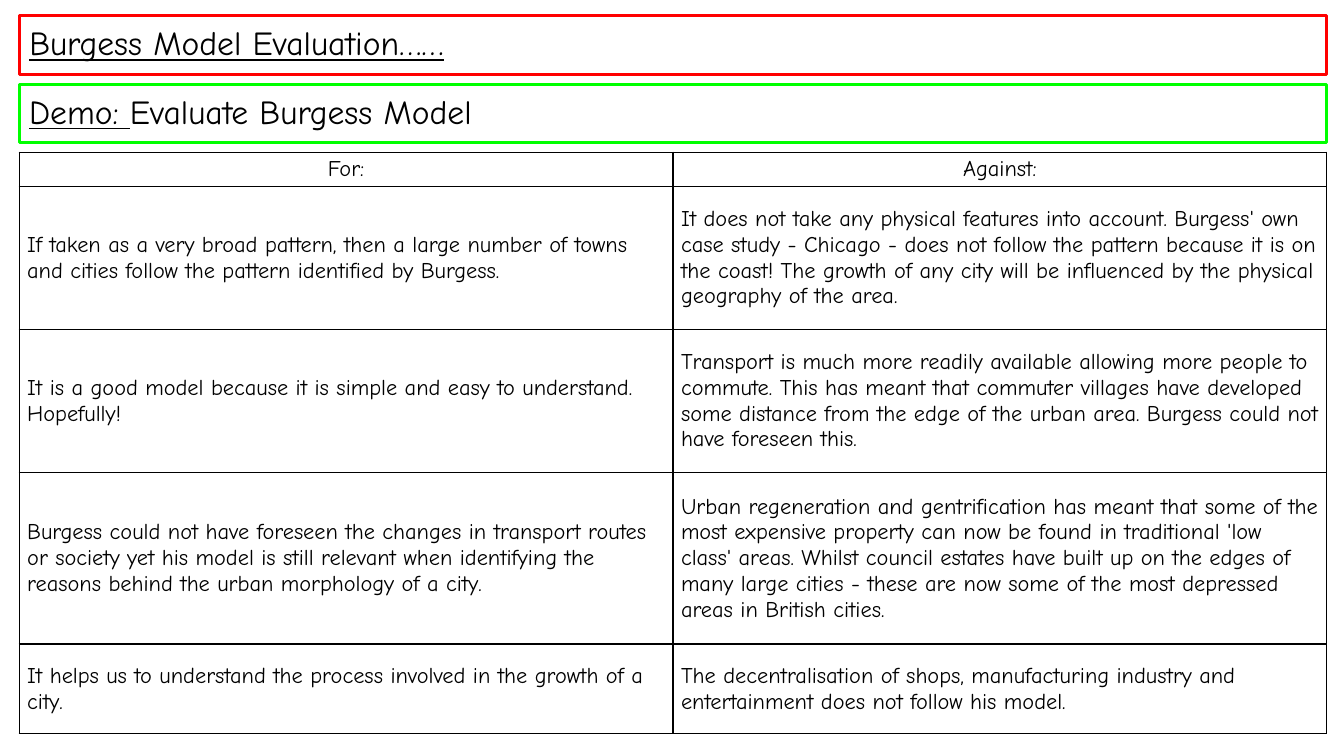
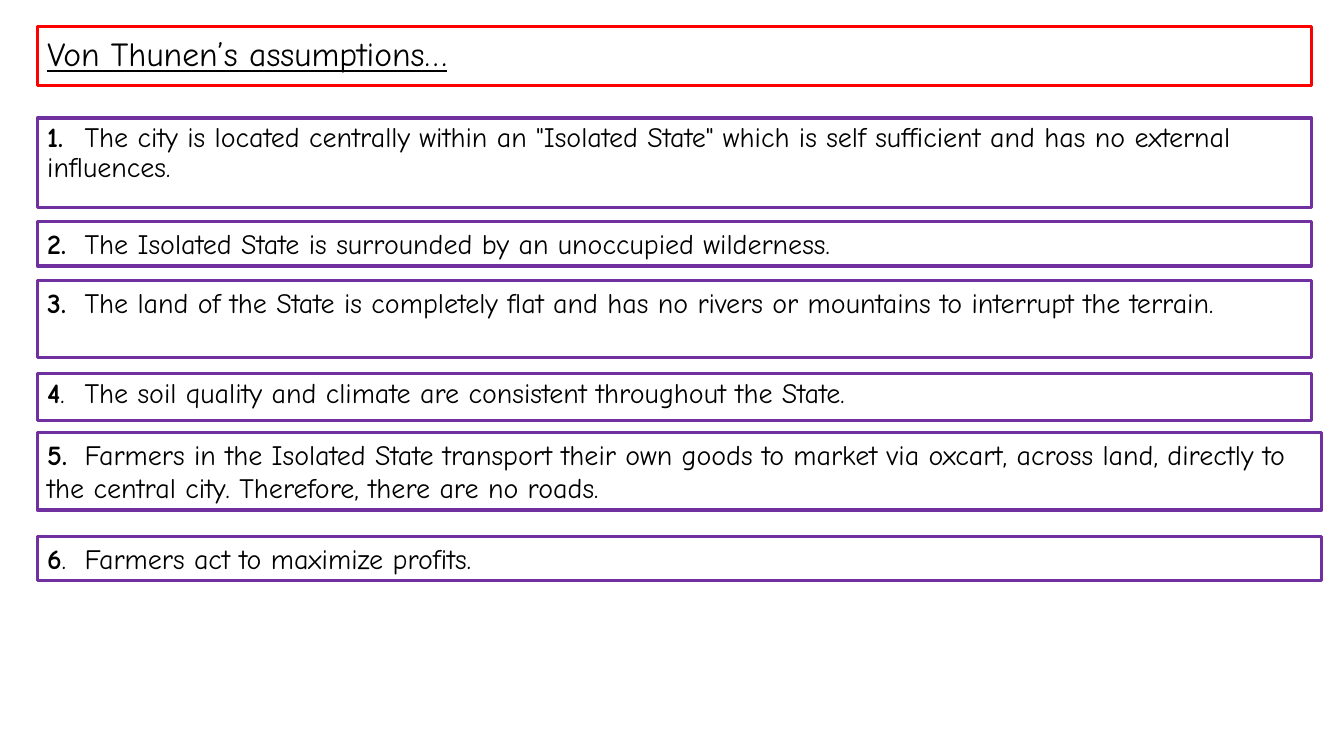
"""Build two slides on urban and rural land use models."""
from lxml import etree
from pptx import Presentation
from pptx import util as u
from pptx.dml.color import RGBColor
from pptx.enum import shapes, text
from pptx.oxml import ns

PX = 9144
FONT = "Comic Neue"
COLOURS = {"ink": "000000", "paper": "FFFFFF", "title": "FF0000",
           "demo": "00FF00", "point": "7030A0"}
TITLE_SIZE, POINT_SIZE, CELL_SIZE = 24, 20, 16

EVALUATION = [
    ("For:", "Against:"),
    ("If taken as a very broad pattern, then a large number of towns and cities "
     "follow the pattern identified by Burgess.",
     "It does not take any physical features into account. Burgess' own case study "
     "- Chicago - does not follow the pattern because it is on the coast! The growth "
     "of any city will be influenced by the physical geography of the area."),
    ("It is a good model because it is simple and easy to understand. Hopefully!",
     "Transport is much more readily available allowing more people to commute. This "
     "has meant that commuter villages have developed some distance from the edge of "
     "the urban area. Burgess could not have foreseen this."),
    ("Burgess could not have foreseen the changes in transport routes or society yet "
     "his model is still relevant when identifying the reasons behind the urban "
     "morphology of a city.",
     "Urban regeneration and gentrification has meant that some of the most expensive "
     "property can now be found in traditional 'low class' areas. Whilst council "
     "estates have built up on the edges of many large cities - these are now some of "
     "the most depressed areas in British cities."),
    ("It helps us to understand the process involved in the growth of a city.",
     "The decentralisation of shops, manufacturing industry and entertainment does "
     "not follow his model."),
]
ROW_HEIGHTS = [34, 142, 142, 170, 89]

ASSUMPTIONS = [
    (117, 1264, 89, 0.9, "1.", "\tThe city is located centrally within an \"Isolated State\" "
     "which is self sufficient and has no external influences."),
    (220, 1264, 44, 1, "2.", "\tThe Isolated State is surrounded by an unoccupied wilderness."),
    (278, 1264, 77, 1, "3.", "\tThe land of the State is completely flat and has no rivers or "
     "mountains to interrupt the terrain."),
    (371, 1264, 46, 0.9, "4", ".\tThe soil quality and climate are consistent throughout the "
     "State."),
    (429, 1274, 77, 1, "5.", "\tFarmers in the Isolated State transport their own goods to "
     "market via oxcart, across land, directly to the central city. Therefore, there are "
     "no roads."),
    (532, 1274, 44, 1, "6", ".\tFarmers act to maximize profits."),
]


def px(length):
    """Turn px into EMU."""
    return u.Emu(length * PX)


def colour(name):
    """Look up a named colour."""
    return RGBColor.from_string(COLOURS[name])


def style_span(span, size, bold=False, underline=False):
    """Give a run the deck's font."""
    font = span.font
    font.name, font.size = FONT, u.Pt(size)
    font.bold, font.underline = bold, underline
    font.color.rgb = colour("ink")


def add_span(para, words, size, **style):
    """Append a styled run to a paragraph."""
    span = para.add_run()
    span.text = words
    style_span(span, size, **style)


def style_box(box, line, anchor):
    """Outline a box and return its first paragraph."""
    box.fill.background()
    box.line.color.rgb = colour(line)
    box.line.width = u.Pt(2.25)
    frame = box.text_frame
    frame.word_wrap = True
    frame.auto_size = text.MSO_AUTO_SIZE.NONE
    frame.vertical_anchor = anchor
    para = frame.paragraphs[0]
    para.alignment = text.PP_ALIGN.LEFT
    return para


def add_box(page, place, line, anchor):
    """Add an outlined rectangle and return its first paragraph."""
    box = page.shapes.add_shape(shapes.MSO_SHAPE.RECTANGLE, *map(px, place))
    box.shadow.inherit = False
    return style_box(box, line, anchor)


def add_titled_page(deck, title, place):
    """Add a page with an underlined title in a red box."""
    page = deck.slides.add_slide(deck.slide_layouts[5])
    box = page.shapes.title
    box.left, box.top, box.width, box.height = map(px, place)
    para = style_box(box, "title", text.MSO_ANCHOR.MIDDLE)
    para.line_spacing = 0.9
    add_span(para, title, TITLE_SIZE, underline=True)
    return page


def add_tab_stop(para, position):
    """Set one left tab stop."""
    stops = etree.SubElement(para._p.get_or_add_pPr(), ns.qn("a:tabLst"))
    etree.SubElement(stops, ns.qn("a:tab"), pos=str(px(position)), algn="l")


def add_point(page, top, width, height, spacing, number, words):
    """Add a numbered point in a purple box."""
    para = add_box(page, (37, top, width, height), "point", text.MSO_ANCHOR.TOP)
    para.line_spacing = spacing
    para.space_before = u.Pt(10 if spacing < 1 else 0)
    add_tab_stop(para, 37)
    add_span(para, number, POINT_SIZE, bold=True)
    add_span(para, words, POINT_SIZE)


def set_borders(cell):
    """Draw thin lines on all four sides of a cell."""
    props = cell._tc.get_or_add_tcPr()
    for index, side in enumerate(("lnL", "lnR", "lnT", "lnB")):
        line = etree.Element(ns.qn(f"a:{side}"), w=str(u.Pt(1)))
        fill = etree.SubElement(line, ns.qn("a:solidFill"))
        etree.SubElement(fill, ns.qn("a:srgbClr"), val=COLOURS["ink"])
        props.insert(index, line)


def fill_cell(cell, words, alignment):
    """Write and format one table cell."""
    cell.fill.solid()
    cell.fill.fore_color.rgb = colour("paper")
    cell.margin_left = cell.margin_right = px(8)
    cell.margin_top = cell.margin_bottom = px(4)
    cell.vertical_anchor = text.MSO_ANCHOR.MIDDLE
    para = cell.text_frame.paragraphs[0]
    para.text = words
    para.alignment = alignment
    style_span(para.runs[0], CELL_SIZE)
    set_borders(cell)


def add_grid(page, rows, heights, left, top, width):
    """Add a plain ruled table with equal columns and a centred header."""
    columns = len(rows[0])
    table = page.shapes.add_table(len(rows), columns, px(left), px(top),
                                  px(width), px(sum(heights))).table
    table.first_row = table.horz_banding = False
    for column in table.columns:
        column.width = px(width) // columns
    for r, (row, height) in enumerate(zip(rows, heights)):
        table.rows[r].height = px(height)
        alignment = text.PP_ALIGN.LEFT if r else text.PP_ALIGN.CENTER
        for c, words in enumerate(row):
            fill_cell(table.cell(r, c), words, alignment)


def build_evaluation(deck):
    """Build the page weighing up the Burgess model."""
    page = add_titled_page(deck, "Burgess Model Evaluation……", (19, 15, 1297, 59))
    para = add_box(page, (19, 84, 1297, 57), "demo", text.MSO_ANCHOR.MIDDLE)
    para.line_spacing = 0.9
    add_span(para, "Demo: ", TITLE_SIZE, underline=True)
    add_span(para, "Evaluate Burgess Model", TITLE_SIZE)
    add_grid(page, EVALUATION, ROW_HEIGHTS, 19, 151, 1297)


def build_assumptions(deck):
    """Build the page listing the assumptions."""
    page = add_titled_page(deck, "Von Thunen’s assumptions…", (37, 26, 1264, 59))
    for assumption in ASSUMPTIONS:
        add_point(page, *assumption)


def main():
    """Build and save the deck."""
    deck = Presentation()
    deck.slide_width, deck.slide_height = px(1333), px(750)
    build_evaluation(deck)
    build_assumptions(deck)
    deck.save("out.pptx")


if __name__ == "__main__":
    main()
